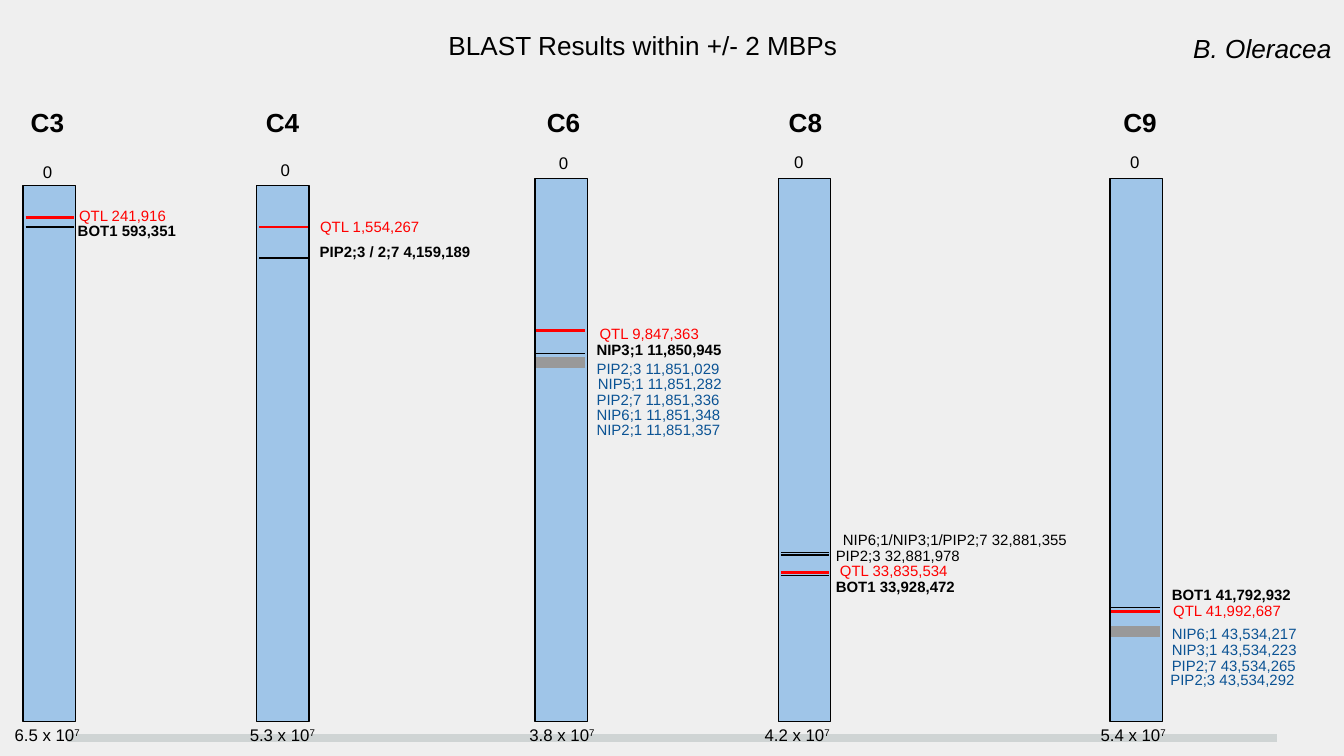
import dataclasses

import lxml.etree
import pptx
import pptx.dml.color
import pptx.enum.shapes
import pptx.enum.text
import pptx.oxml.ns
import pptx.util

Inches = pptx.util.Inches
Align = pptx.enum.text.PP_ALIGN


@dataclasses.dataclass(frozen=True)
class Theme:
    font: str = "Arial"
    paper: str = "EFEFEF"
    rule: str = "CFD4D4"
    bar: str = "9FC5E8"
    ink: str = "000000"
    qtl: str = "FF0000"
    near: str = "0B5394"
    cluster: str = "999999"
    heading: float = 14
    scale: float = 9
    label: float = 8
    small_text_drop: float = 2
    thin: float = 0.75
    medium: float = 1.5
    thick: float = 6
    base: float = 4


THEME = Theme()


@dataclasses.dataclass(frozen=True)
class LabelStyle:
    color: str
    bold: bool = False
    align: Align = Align.LEFT
    spacing: float = 1.0
    width: float = 1.62
    height: float = 0.34


QTL = LabelStyle(THEME.qtl, align=Align.RIGHT, spacing=1.15, width=1.48)
QTL_LEFT = LabelStyle(THEME.qtl, width=1.23, height=0.29)
HIT = LabelStyle(THEME.ink, bold=True)
HIT_WIDE = LabelStyle(THEME.ink, bold=True, spacing=1.15, width=2.15)
GENE = LabelStyle(THEME.ink, spacing=1.15, width=2.15)
GENE_RIGHT = LabelStyle(THEME.ink, align=Align.RIGHT, spacing=1.15, width=2.31)
NEAR = LabelStyle(THEME.near)
NEAR_WIDE = LabelStyle(THEME.near, spacing=1.15, width=2.15, height=0.42)

# Marker styles: colour and width
QTL_MARK = (THEME.qtl, THEME.medium)
GENE_MARK = (THEME.ink, THEME.thin)
CLUSTER_MARK = (THEME.cluster, THEME.thick)


@dataclasses.dataclass(frozen=True)
class Chromosome:
    name: str
    left: float
    top: float
    name_left: float
    zero_at: tuple
    length: str
    length_left: float
    mark_left: float
    markers: list  # (height on the page, marker style)
    labels: list   # (left, top, label style, text)


BAR_WIDTH, BAR_BOTTOM = 0.39, 5.37
MARK_LENGTH = 0.36

CHROMOSOMES = [
    Chromosome(
        "C3", 0.17, 1.38, 0.13, (0.22, 1.13), "6.5", 0.01, 0.19,
        [(1.62, QTL_MARK), (1.69, GENE_MARK)],
        [(0.49, 1.47, QTL_LEFT, "QTL 241,916"),
         (0.48, 1.58, HIT, "BOT1 593,351")]),
    Chromosome(
        "C4", 1.91, 1.38, 1.88, (1.99, 1.11), "5.3", 1.76, 1.93,
        [(1.69, QTL_MARK), (1.92, GENE_MARK)],
        [(1.74, 1.52, QTL, "QTL 1,554,267"),
         (2.28, 1.74, HIT, "PIP2;3 / 2;7 4,159,189")]),
    Chromosome(
        "C6", 3.98, 1.33, 3.97, (4.06, 1.06), "3.8", 3.84, 3.99,
        [(2.46, QTL_MARK), (2.63, GENE_MARK), (2.7, CLUSTER_MARK)],
        [(3.82, 2.32, QTL, "QTL 9,847,363"),
         (4.34, 2.47, HIT, "NIP3;1 11,850,945"),
         (4.34, 2.61, NEAR, "PIP2;3 11,851,029"),
         (4.35, 2.72, NEAR, "NIP5;1 11,851,282"),
         (4.34, 2.84, NEAR, "PIP2;7 11,851,336"),
         (4.34, 2.95, NEAR, "NIP6;1 11,851,348"),
         (4.34, 3.06, NEAR, "NIP2;1 11,851,357")]),
    Chromosome(
        "C8", 5.79, 1.33, 5.77, (5.81, 1.05), "4.2", 5.59, 5.81,
        [(4.11, GENE_MARK), (4.13, GENE_MARK),
         (4.26, QTL_MARK), (4.28, GENE_MARK)],
        [(5.73, 3.85, GENE_RIGHT, "NIP6;1/NIP3;1/PIP2;7 32,881,355"),
         (6.12, 3.97, GENE, "PIP2;3 32,881,978"),
         (5.67, 4.08, QTL, "QTL 33,835,534"),
         (6.12, 4.2, HIT_WIDE, "BOT1 33,928,472")]),
    Chromosome(
        "C9", 8.26, 1.33, 8.26, (8.31, 1.05), "5.4", 8.09, 8.27,
        [(4.52, GENE_MARK), (4.55, QTL_MARK), (4.7, CLUSTER_MARK)],
        [(8.62, 4.26, HIT_WIDE, "BOT1 41,792,932"),
         (8.15, 4.38, QTL, "QTL 41,992,687"),
         (8.62, 4.55, NEAR_WIDE, "NIP6;1 43,534,217"),
         (8.62, 4.67, NEAR_WIDE, "NIP3;1 43,534,223"),
         (8.62, 4.79, NEAR_WIDE, "PIP2;7 43,534,265"),
         (8.61, 4.92, NEAR, "PIP2;3 43,534,292")]),
]


def rgb(color):
    return pptx.dml.color.RGBColor.from_string(color)


class Painter:
    def __init__(self, page, theme):
        self.page = page
        self.theme = theme

    def background(self):
        fill = self.page.background.fill
        fill.solid()
        fill.fore_color.rgb = rgb(self.theme.paper)

    def line(self, left, right, height, color, width):
        line = self.page.shapes.add_connector(
            pptx.enum.shapes.MSO_CONNECTOR.STRAIGHT,
            Inches(left), Inches(height), Inches(right), Inches(height))
        line.line.color.rgb = rgb(color)
        line.line.width = pptx.util.Pt(width)
        properties = line._element.spPr
        lxml.etree.SubElement(properties, pptx.oxml.ns.qn("a:effectLst"))

    def bar(self, left, top):
        bar = self.page.shapes.add_shape(
            pptx.enum.shapes.MSO_SHAPE.RECTANGLE, Inches(left), Inches(top),
            Inches(BAR_WIDTH), Inches(BAR_BOTTOM - top))
        bar.shadow.inherit = False
        bar.fill.solid()
        bar.fill.fore_color.rgb = rgb(self.theme.bar)
        bar.line.color.rgb = rgb(self.theme.ink)
        bar.line.width = pptx.util.Pt(self.theme.thin)

    def text(self, words, left, top, width, height, size, color=THEME.ink,
             bold=False, italic=False, align=Align.LEFT, spacing=1.0, power=None):
        box = self.page.shapes.add_textbox(
            Inches(left), Inches(top), Inches(width), Inches(height))
        frame = box.text_frame
        frame.word_wrap = True
        frame.margin_left = frame.margin_right = Inches(0.1)
        frame.margin_top = frame.margin_bottom = Inches(0.1)
        frame.text = words
        para = frame.paragraphs[0]
        para.alignment = align
        para.line_spacing = spacing
        if size < self.theme.heading:
            para.space_before = pptx.util.Pt(self.theme.small_text_drop)
        if power:
            raised = para.add_run()
            raised.text = power
            raised.font._element.set("baseline", "30000")
        for span in para.runs:
            span.font.name = self.theme.font
            span.font.size = pptx.util.Pt(size)
            span.font.bold = bold
            span.font.italic = italic
            span.font.color.rgb = rgb(color)

    def label(self, left, top, style, words):
        self.text(words, left, top, style.width, style.height, self.theme.label,
                  style.color, style.bold, align=style.align, spacing=style.spacing)

    def chromosome(self, item):
        theme = self.theme
        self.bar(item.left, item.top)
        self.text(item.name, item.name_left, 0.69, 0.63, 0.29,
                  theme.heading, bold=True)
        self.text("0", *item.zero_at, 0.55, 0.2, theme.scale)
        self.text(f"{item.length} x 10", item.length_left, 5.32, 1.15, 0.22,
                  theme.scale, power="7")
        for height, (color, width) in item.markers:
            self.line(item.mark_left, item.mark_left + MARK_LENGTH,
                      height, color, width)
        for label in item.labels:
            self.label(*label)


def main():
    # Widescreen page, 16 to 9
    deck = pptx.Presentation()
    deck.slide_width, deck.slide_height = Inches(10), Inches(10 * 9 / 16)
    page = deck.slides.add_slide(deck.slide_layouts[6])
    painter = Painter(page, THEME)

    # Background and base rule
    painter.background()
    painter.line(0.5, 9.5, 5.49, THEME.rule, THEME.base)

    # Chromosomes with their markers and labels
    for item in CHROMOSOMES:
        painter.chromosome(item)

    # Headings
    painter.text("B. Oleracea", 8.78, 0.14, 1.4, 0.26, THEME.heading, italic=True)
    painter.text("BLAST Results within +/- 2 MBPs", 2, 0.12, 5.57, 0.36,
                 THEME.heading, align=Align.CENTER)

    deck.save("out.pptx")


if __name__ == "__main__":
    main()
